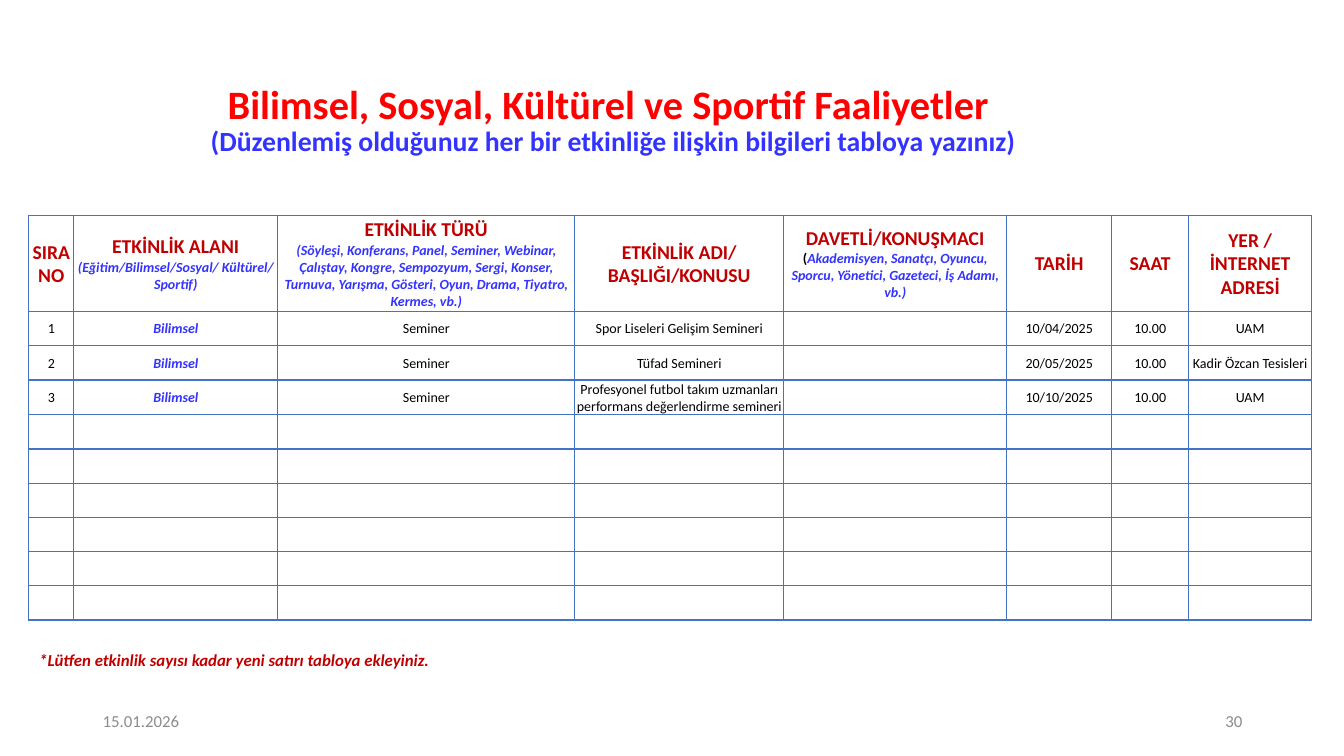
from typing import NamedTuple

from lxml import etree
from pptx import Presentation
from pptx.dml.color import RGBColor
from pptx.enum.text import MSO_ANCHOR, PP_ALIGN
from pptx.oxml.ns import qn
from pptx.util import Inches, Pt

LEFT, CENTER, RIGHT = PP_ALIGN.LEFT, PP_ALIGN.CENTER, PP_ALIGN.RIGHT
TOP, MIDDLE = MSO_ANCHOR.TOP, MSO_ANCHOR.MIDDLE

COLORS = {"red": "FF0000", "dark_red": "C00000", "blue": "3333FF", "black": "000000",
          "gray": "8C8C8C", "white": "FFFFFF", "border": "4472C4"}
FONT = "Calibri"

# The slide is a grid of 100 columns by 100 rows
SLIDE_W, SLIDE_H = Inches(13.33), Inches(7.5)


def cols(count: float) -> int:
    return round(SLIDE_W * count / 100)


def rows(count: float) -> int:
    return round(SLIDE_H * count / 100)


class Run(NamedTuple):
    text: str
    size: float = 10
    color: str = "black"
    bold: bool = False
    italic: bool = False


class Box(NamedTuple):
    left: float
    top: float
    width: float
    height: float
    lines: list[list[Run]]
    align: PP_ALIGN = LEFT
    anchor: MSO_ANCHOR = MIDDLE
    spacing: float = 1.0


def heading(text: str) -> Run:
    return Run(text, 14, "dark_red", bold=True)


def hint(text: str) -> Run:
    return Run(text, 10, "blue", bold=True, italic=True)


def write(frame, lines: list[list[Run]], *, align=CENTER, spacing=1.0) -> None:
    """Fill a text frame, one paragraph per line of runs."""
    frame.word_wrap = True
    for index, line in enumerate(lines):
        paragraph = frame.add_paragraph() if index else frame.paragraphs[0]
        paragraph.alignment, paragraph.line_spacing = align, spacing
        for part in line:
            if part.text == "\n":
                paragraph.add_line_break()
                continue
            run = paragraph.add_run()
            run.text = part.text
            font = run.font
            font.name, font.size = FONT, Pt(part.size)
            font.bold, font.italic = part.bold, part.italic
            font.color.rgb = RGBColor.from_string(COLORS[part.color])


def draw_box(slide, box: Box) -> None:
    shape = slide.shapes.add_textbox(cols(box.left), rows(box.top),
                                     cols(box.width), rows(box.height))
    shape.text_frame.vertical_anchor = box.anchor
    write(shape.text_frame, box.lines, align=box.align, spacing=box.spacing)


def style_cell(cell) -> None:
    """Give a cell thin borders, narrow margins and a white fill."""
    cell.margin_left = cell.margin_right = cell.margin_top = Inches(0.01)
    cell.margin_bottom = 0
    cell.vertical_anchor = MIDDLE
    properties = cell._tc.get_or_add_tcPr()
    for side in ("a:lnL", "a:lnR", "a:lnT", "a:lnB"):
        line = etree.SubElement(properties, qn(side), w=str(Pt(1)))
        fill = etree.SubElement(line, qn("a:solidFill"))
        etree.SubElement(fill, qn("a:srgbClr"), val=COLORS["border"])
    cell.fill.solid()
    cell.fill.fore_color.rgb = RGBColor.from_string(COLORS["white"])


# Table content
COLUMN_WIDTHS = [3.35, 15.18, 22.1, 15.55, 16.59, 7.81, 5.73, 9.15]
HEADER_HEIGHT, ROW_HEIGHT, ENTRY_ROWS = 12.67, 4.53, 9
TABLE_LEFT, TABLE_TOP = 2.14, 28.55

HEADERS = [
    [[heading("SIRA NO")]],
    [[heading("ETKİNLİK ALANI "), hint("(Eğitim/Bilimsel/Sosyal/ Kültürel/ Sportif)")]],
    [[heading("ETKİNLİK TÜRÜ")],
     [hint("(Söyleşi, Konferans, Panel, Seminer, Webinar, Çalıştay, Kongre, Sempozyum, "
           "Sergi, Konser, Turnuva, Yarışma, Gösteri, Oyun, Drama, Tiyatro, Kermes, vb.)")]],
    [[heading("ETKİNLİK ADI/ BAŞLIĞI/KONUSU")]],
    [[heading("DAVETLİ/KONUŞMACI "), Run("(", bold=True),
      hint("Akademisyen, Sanatçı, Oyuncu, Sporcu, Yönetici, Gazeteci, İş Adamı, vb.)")]],
    [[heading("TARİH")]],
    [[heading("SAAT")]],
    [[heading("YER / İNTERNET ADRESİ")]],
]


class Event(NamedTuple):
    title: str
    date: str
    place: str
    area: str = "Bilimsel"
    kind: str = "Seminer"
    guest: str = ""
    time: str = "10.00"


EVENTS = [
    Event("Spor Liseleri Gelişim Semineri", "10/04/2025", "UAM"),
    Event("Tüfad Semineri", "20/05/2025", "Kadir Özcan Tesisleri"),
    Event("Profesyonel futbol takım uzmanları performans değerlendirme semineri",
          "10/10/2025", "UAM"),
]


def event_cells(number: int, event: Event) -> list[list[list[Run]]]:
    plain = [event.kind, event.title, event.guest, event.date, event.time, event.place]
    return [[[Run(str(number))]], [[hint(event.area)]],
            *([[Run(text)]] if text else [] for text in plain)]


def draw_events_table(slide) -> None:
    content = [HEADERS, *(event_cells(n, event) for n, event in enumerate(EVENTS, 1))]
    heights = [HEADER_HEIGHT] + [ROW_HEIGHT] * ENTRY_ROWS
    content += [[[] for _ in COLUMN_WIDTHS] for _ in heights[len(content):]]
    table = slide.shapes.add_table(
        len(heights), len(COLUMN_WIDTHS), cols(TABLE_LEFT), rows(TABLE_TOP),
        cols(sum(COLUMN_WIDTHS)), rows(sum(heights))).table
    table.first_row = table.horz_banding = False
    for column, width in zip(table.columns, COLUMN_WIDTHS):
        column.width = cols(width)
    for row, height, entries in zip(table.rows, heights, content):
        row.height = rows(height)
        for cell, lines in zip(row.cells, entries):
            style_cell(cell)
            if lines:
                write(cell.text_frame, lines)
            else:  # a small end mark keeps empty rows from growing
                paragraph = cell.text_frame.paragraphs[0]._p
                etree.SubElement(paragraph, qn("a:endParaRPr"), sz="1000")


# Title, footer and note
TITLE = Box(2.93, 10.13, 85.37, 11.73, [[
    Run("Bilimsel, Sosyal, Kültürel ve Sportif Faaliyetler ", 28.8, "red", bold=True),
    Run("\n"),
    Run("(Düzenlemiş olduğunuz her bir etkinliğe ilişkin bilgileri tabloya yazınız)",
        19.8, "blue", bold=True)]], align=CENTER, spacing=0.9)
DATE = Box(6.9, 92.67, 22.5, 5.33, [[Run("15.01.2026", 12, "gray")]])
PAGE_NUMBER = Box(70.67, 92.67, 22.5, 5.33, [[Run("30", 12, "gray")]], align=RIGHT)
NOTE = Box(2.18, 85.33, 37.5, 4, [[
    Run("*Lütfen etkinlik sayısı kadar yeni satırı tabloya ekleyiniz.",
        12, "dark_red", bold=True, italic=True)]], anchor=TOP)


def main() -> None:
    presentation = Presentation()
    presentation.slide_width, presentation.slide_height = SLIDE_W, SLIDE_H
    slide = presentation.slides.add_slide(presentation.slide_layouts[6])
    for box in (TITLE, DATE, PAGE_NUMBER):
        draw_box(slide, box)
    draw_events_table(slide)
    draw_box(slide, NOTE)
    presentation.save("out.pptx")


if __name__ == "__main__":
    main()
